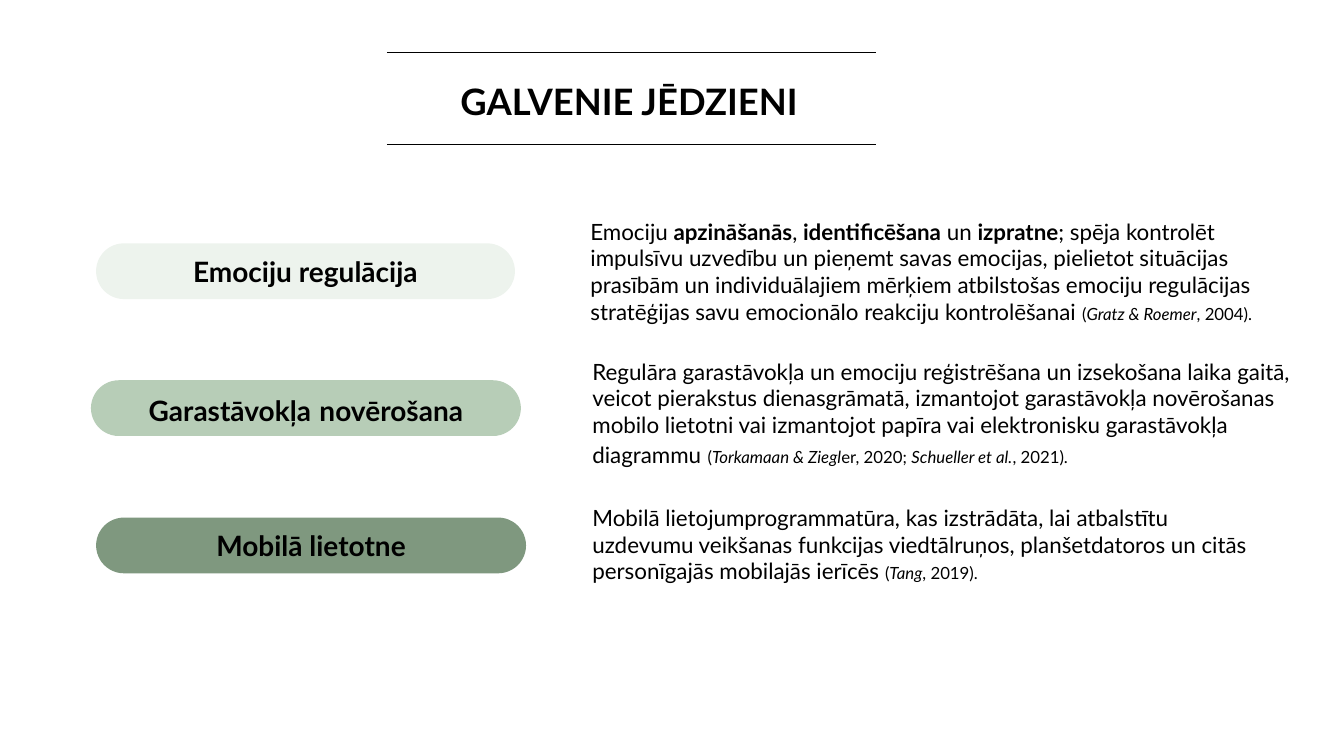
from dataclasses import dataclass

from lxml import etree
from pptx import Presentation
from pptx import util as u
from pptx.dml.color import RGBColor
from pptx.enum import shapes, text
from pptx.oxml.ns import qn


@dataclass(frozen=True)
class Theme:
    font: str = "Lato"
    gap_font: str = "Times New Roman"
    ink: str = "000000"
    pale: str = "EDF3ED"
    light: str = "B7CDB7"
    dark: str = "7F987F"
    title: int = 26
    label: int = 20
    body: int = 16
    cite: int = 12


T = Theme()

# Run styles
PLAIN = {}
BOLD = {"bold": True}
CITE = {"size": u.Pt(T.cite)}
SOURCE = {**CITE, "italic": True}
LABEL_GAP = {"size": u.Pt(24), "name": T.gap_font}
BODY_GAP = {"size": u.Pt(18), "name": T.gap_font}

# Concepts: pill (left, top, width, colour), label, text box, definition
CONCEPTS = [
    ((2.44, 6.15, 10.52, T.pale),
     [("Emociju regulācija", PLAIN)],
     (14.63, 5.36, 18.29, 3.0),
     [("Emociju ", PLAIN), ("apzināšanās", BOLD), (", ", PLAIN),
      ("identificēšana", BOLD), (" un ", PLAIN), ("izpratne", BOLD),
      ("; spēja kontrolēt impulsīvu uzvedību un pieņemt savas emocijas, "
       "pielietot situācijas prasībām un individuālajiem mērķiem atbilstošas "
       "emociju regulācijas stratēģijas savu emocionālo reakciju "
       "kontrolēšanai ", PLAIN),
      ("(", CITE), ("Gratz & Roemer", SOURCE), (", 2004).", CITE)]),
    ((2.31, 9.6, 10.8, T.light),
     [("Garastāvokļa", PLAIN), (" ", LABEL_GAP), ("novērošana", PLAIN)],
     (14.68, 8.89, 18.24, 3.07),
     [("Regulāra garastāvokļa un emociju reģistrēšana un izsekošana laika "
       "gaitā, veicot pierakstus dienasgrāmatā, izmantojot garastāvokļa "
       "novērošanas mobilo lietotni vai izmantojot papīra vai elektronisku "
       "garastāvokļa diagrammu", PLAIN), (" ", BODY_GAP),
      ("(", CITE), ("Torkamaan & Ziegl", SOURCE), ("er, 2020; ", CITE),
      ("Schueller et al.", SOURCE), (", 2021).", CITE)]),
    ((2.44, 13.06, 10.8, T.dark),
     [("Mobilā lietotne", PLAIN)],
     (14.68, 12.57, 17.25, 2.31),
     [("Mobilā lietojumprogrammatūra, kas izstrādāta, lai atbalstītu "
       "uzdevumu veikšanas funkcijas viedtālruņos, planšetdatoros un citās "
       "personīgajās mobilajās ierīcēs ", PLAIN),
      ("(", CITE), ("Tang", SOURCE), (", 2019).", CITE)]),
]


def rgb(colour):
    return RGBColor.from_string(colour)


def write(tf, runs, size, bold=False, align=text.PP_ALIGN.LEFT):
    """Fill the first paragraph of a frame with styled runs."""
    tf.word_wrap = True
    p = tf.paragraphs[0]
    p.alignment = align
    p.font.name, p.font.size, p.font.bold = T.font, u.Pt(size), bold
    p.font.color.rgb = rgb(T.ink)
    for words, style in runs:
        r = p.add_run()
        r.text = words
        for key, value in style.items():
            setattr(r.font, key, value)
    return p


def add_text(s, box, runs, size, **style):
    tf = s.shapes.add_textbox(*map(u.Cm, box)).text_frame
    return tf, write(tf, runs, size, **style)


def add_pill(s, left, top, width, colour, label):
    sp = s.shapes.add_shape(shapes.MSO_SHAPE.ROUNDED_RECTANGLE,
                            u.Cm(left), u.Cm(top), u.Cm(width), u.Cm(1.37))
    sp.adjustments[0] = 0.5
    sp.shadow.inherit = False
    sp.fill.solid()
    sp.fill.fore_color.rgb = sp.line.color.rgb = rgb(colour)
    sp.line.width = u.Pt(1)
    sp.text_frame.vertical_anchor = text.MSO_ANCHOR.MIDDLE
    write(sp.text_frame, label, T.label, bold=True,
          align=text.PP_ALIGN.CENTER)


def add_rule(s, y):
    line = s.shapes.add_connector(shapes.MSO_CONNECTOR.STRAIGHT, u.Cm(9.75),
                                  u.Cm(y), u.Cm(22.07), u.Cm(y))
    line.line.color.rgb = rgb(T.ink)
    line.line.width = u.Pt(0.5)
    etree.SubElement(line._element.spPr, qn("a:effectLst"))


def add_title(s, words):
    tf, p = add_text(s, (8.2, 2.13, 15.32, 3.68), [(words, PLAIN)], T.title,
                     bold=True, align=text.PP_ALIGN.CENTER)
    tf.margin_left = tf.margin_right = tf.margin_top = tf.margin_bottom = 0
    p.line_spacing = 0.9


def main():
    prs = Presentation()
    prs.slide_width, prs.slide_height = u.Cm(33.87), u.Cm(19.05)
    s = prs.slides.add_slide(prs.slide_layouts[6])

    # Heading between two rules
    add_title(s, "GALVENIE JĒDZIENI")
    for y in (1.32, 3.63):
        add_rule(s, y)

    # Concepts with their definitions
    for pill, label, box, definition in CONCEPTS:
        add_pill(s, *pill, label)
        add_text(s, box, definition, T.body)

    prs.save("out.pptx")


if __name__ == "__main__":
    main()
